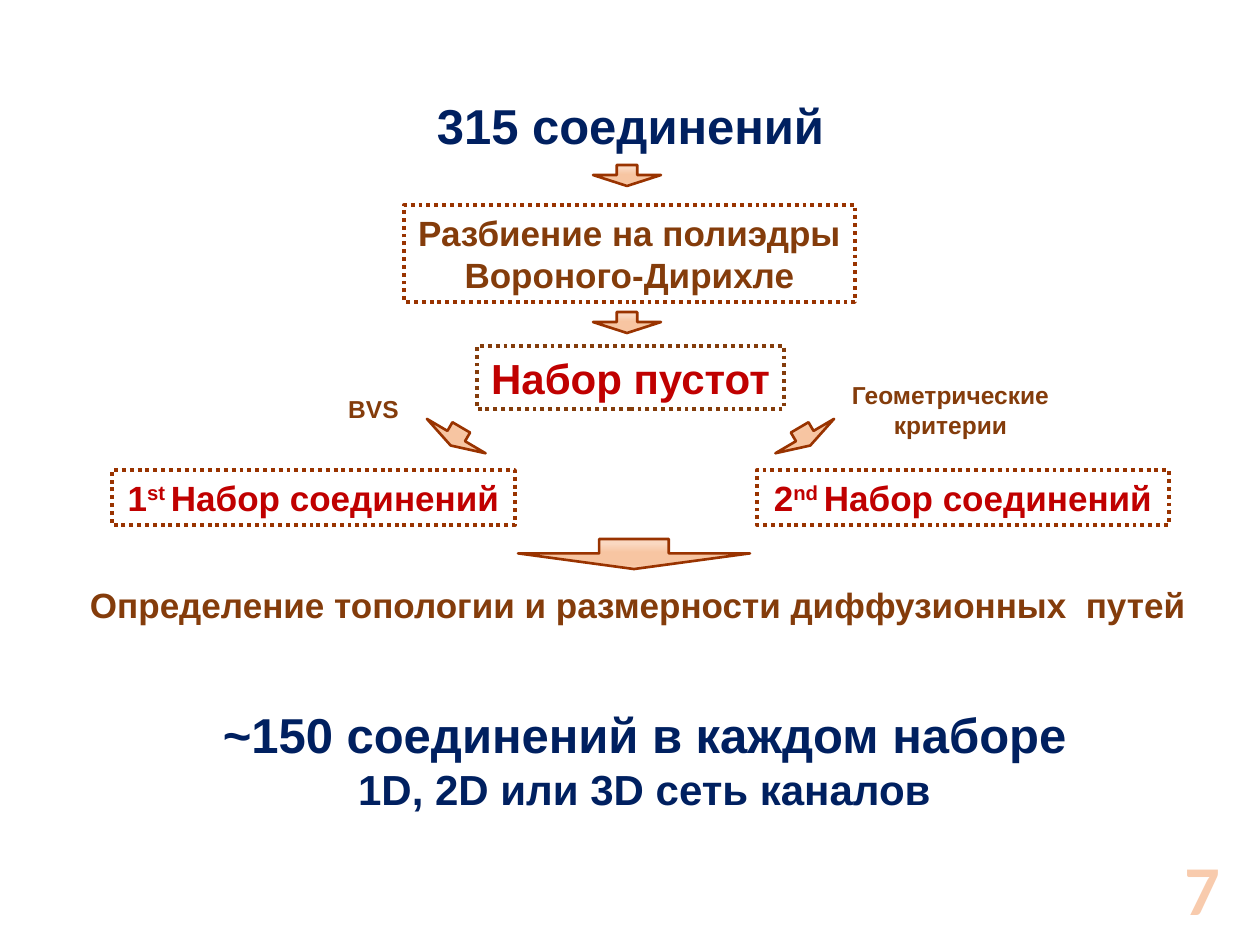
from copy import deepcopy

from lxml import etree
from pptx import Presentation, util as u
from pptx.dml.color import RGBColor
from pptx.enum import dml, shapes, text
from pptx.oxml.ns import qn

PX = 914400 / 126
NAVY, BROWN, RUST, RED = "002060", "843C0B", "993300", "C00000"
PEACH, PALE, DEEP, ORANGE = "F8CBAD", "FAD8C1", "F7C5A2", "ED7D31"
ARROW_STOPS = ((0.15, PALE), (0.45, DEEP), (0.86, DEEP), (1, PALE))


def px(length):
    return u.Emu(round(length * PX))


def colour(value):
    return RGBColor.from_string(value)


def set_all(target, values):
    for name, value in values.items():
        setattr(target, name, value)


def place(origin, left, top, width, height):
    """Turn a box given relative to a region into slide lengths."""
    return [px(n) for n in (origin[0] + left, origin[1] + top, width, height)]


def write(shape, paras, hue, font="Arial", align=text.PP_ALIGN.CENTER, **frame_format):
    """Fill a shape; each paragraph is (size, lines), each line a list of (words, baseline)."""
    frame = shape.text_frame
    set_all(frame, {"word_wrap": False, "vertical_anchor": text.MSO_ANCHOR.TOP,
                    "auto_size": text.MSO_AUTO_SIZE.SHAPE_TO_FIT_TEXT, **frame_format})
    for index, (size, lines) in enumerate(paras):
        para = frame.add_paragraph() if index else frame.paragraphs[0]
        para.alignment = align
        for number, line in enumerate(lines):
            if number:
                para.add_line_break()
            for words, baseline in line:
                span = para.add_run()
                span.text = words
                set_all(span.font, {"name": font, "size": u.Pt(size), "bold": True})
                span.font.color.rgb = colour(hue)
                if baseline:
                    span.font._element.set("baseline", str(baseline * 1000))


def plain(size, *lines):
    return size, [[(line, 0)] for line in lines]


def add_label(page, spot, paras, hue, **options):
    label = page.shapes.add_textbox(*spot)
    write(label, paras, hue, **options)
    return label


def add_frame(page, spot, paras, hue, edge=RUST):
    """Add a text box with a dotted outline."""
    box = page.shapes.add_shape(shapes.MSO_SHAPE.RECTANGLE, *spot)
    box.shadow.inherit = False
    box.fill.background()
    box.line.color.rgb = colour(edge)
    set_all(box.line, {"width": u.Pt(2.25), "dash_style": dml.MSO_LINE.ROUND_DOT})
    write(box, paras, hue)


def add_arrow(page, spot, rotation=0, flipped=False):
    arrow = page.shapes.add_shape(shapes.MSO_SHAPE.DOWN_ARROW, *spot)
    arrow.adjustments[0], arrow.adjustments[1] = 0.3, 0.521
    arrow.rotation = rotation
    arrow.shadow.inherit = False
    arrow.line.color.rgb = colour(RUST)
    arrow.line.width = u.Pt(1.5)
    arrow.fill.gradient()
    arrow.fill.gradient_angle = 270
    stops = arrow._element.spPr.find(qn("a:gradFill")).find(qn("a:gsLst"))
    for _ in range(len(ARROW_STOPS) - len(stops)):
        stops.append(deepcopy(stops[0]))
    for stop, (position, hue) in zip(arrow.fill.gradient_stops, ARROW_STOPS):
        stop.color.rgb = colour(hue)
        stop.position = position
    if flipped:
        arrow._element.spPr.find(qn("a:xfrm")).set("flipH", "1")


def selection_steps(page, box):
    """From all compounds to the set of voids."""
    add_label(page, place(box, 18, 0, 417, 72), [plain(28, "315 соединений")], NAVY)
    for top in (76, 223):
        add_arrow(page, place(box, 189, top, 68, 21))
    add_frame(page, place(box, 0, 116, 451, 97),
              [plain(20, "Разбиение на полиэдры", "Вороного-Дирихле")], BROWN)
    add_frame(page, place(box, 73, 257, 307, 63), [plain(24, "Набор пустот")], RED, BROWN)


def criteria_branches(page, box):
    """Two criteria, each leading to its own set of compounds."""
    add_label(page, place(box, 223, 14, 77, 43), [plain(14, "BVS")], BROWN)
    add_label(page, place(box, 727, 0, 223, 72),
              [plain(14, "Геометрические", "критерии")], BROWN)
    add_arrow(page, place(box, 310, 52, 68, 21), 30.4)
    add_arrow(page, place(box, 659, 52, 68, 21), 329.6, True)
    for left, width, number, ending in ((0, 403, "1", "st "), (645, 412, "2", "nd ")):
        line = [(number, 0), (ending, 30), ("Набор соединений", 0)]
        add_frame(page, place(box, left, 96, width, 55), [(20, [line])], RED)


def outcome(page, box):
    add_arrow(page, place(box, 445, 0, 232, 30))
    add_label(page, place(box, 0, 38, 1130, 55),
              [plain(20, "Определение топологии и размерности диффузионных  путей")], BROWN)
    add_label(page, place(box, 132, 159, 879, 123),
              [plain(28, "~150 соединений в каждом наборе"),
               plain(24, "1D, 2D или 3D сеть каналов")], NAVY)


def page_number(page, box):
    label = add_label(page, place(box, 0, 0, 58, 50), [plain(40, "7")], PEACH,
                      font="Calibri", align=text.PP_ALIGN.RIGHT, word_wrap=True,
                      vertical_anchor=text.MSO_ANCHOR.MIDDLE,
                      auto_size=text.MSO_AUTO_SIZE.NONE)
    outline = etree.Element(qn("a:ln"), w=str(u.Pt(1.75)))
    fill = etree.SubElement(outline, qn("a:solidFill"))
    etree.SubElement(fill, qn("a:srgbClr"), val=ORANGE)
    label.text_frame.paragraphs[0].runs[0].font._element.insert(0, outline)


def main():
    deck = Presentation()
    set_all(deck, {"slide_width": px(1260), "slide_height": px(945)})
    page = deck.slides.add_slide(deck.slide_layouts[6])
    selection_steps(page, (404, 89))
    criteria_branches(page, (112, 374))
    outcome(page, (73, 539))
    page_number(page, (1172, 863))
    deck.save("out.pptx")


if __name__ == "__main__":
    main()
